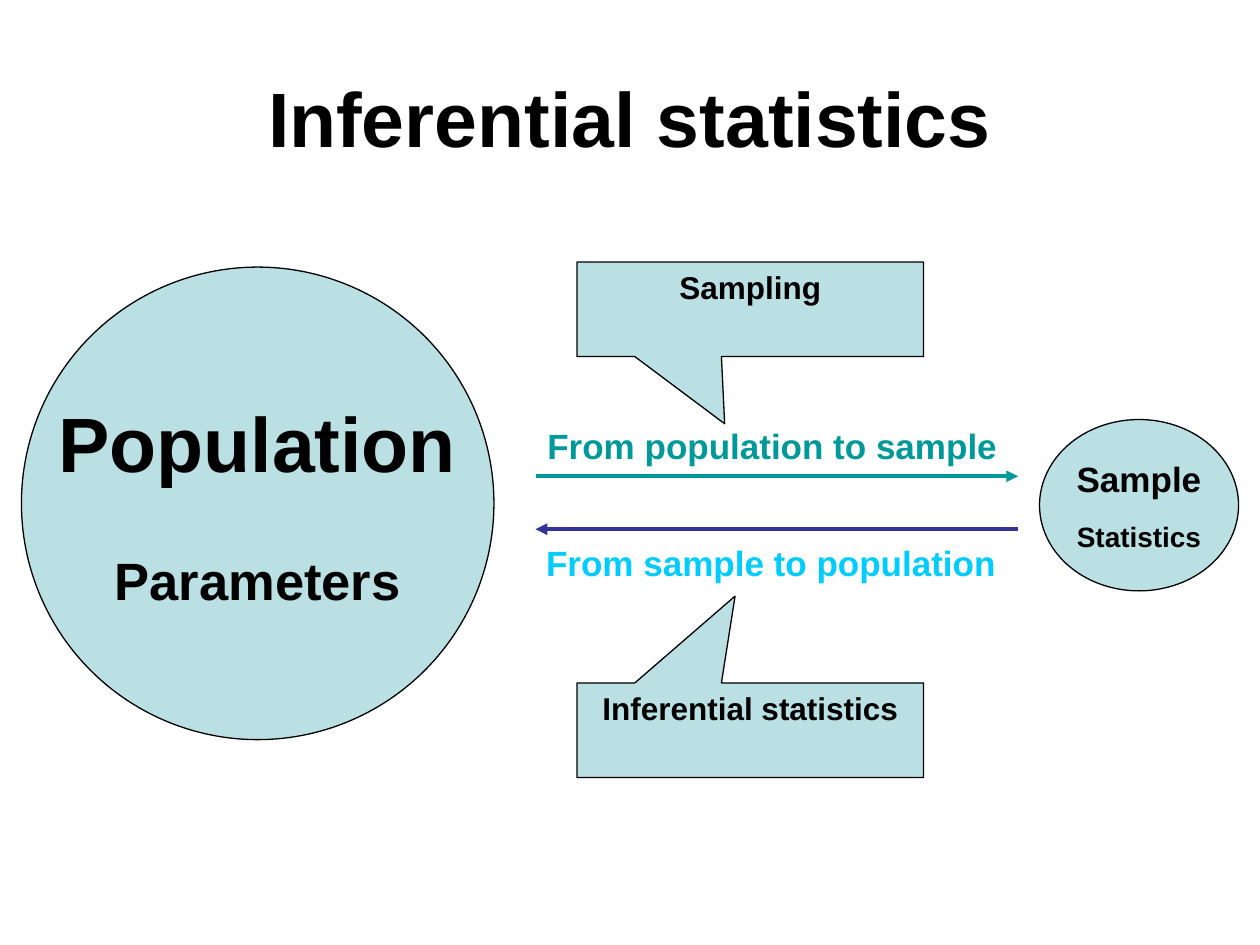
"""Build a slide on how a population and a sample relate."""
from lxml.etree import SubElement
from pptx import Presentation
from pptx.dml.color import RGBColor
from pptx.enum.shapes import MSO_CONNECTOR, MSO_SHAPE
from pptx.enum.text import MSO_ANCHOR, PP_ALIGN
from pptx.oxml.ns import qn
from pptx.util import Inches, Pt

HUES = {
    "ink": "000000",
    "pale": "BBE0E3",
    "teal": "009999",
    "navy": "333399",
    "sky": "00CCFF",
}
FONT = {"name": "Arial", "bold": True}
MID = {"vertical_anchor": MSO_ANCHOR.MIDDLE, "word_wrap": True}
FREE = {"vertical_anchor": MSO_ANCHOR.MIDDLE, "word_wrap": False}
TOP = {"vertical_anchor": MSO_ANCHOR.TOP, "word_wrap": True}


def shade(name):
    return RGBColor.from_string(HUES[name])


def style(item, look):
    for key, value in look.items():
        setattr(item, key, value)


def write(shape, lines, frame, hue="ink"):
    body = shape.text_frame
    style(body, frame)
    for i, (text, size, gap) in enumerate(lines):
        para = body.add_paragraph() if i else body.paragraphs[0]
        style(para, {"alignment": PP_ALIGN.CENTER, "space_before": Pt(gap)})
        run = para.add_run()
        run.text = text
        style(run.font, {**FONT, "size": Pt(size)})
        run.font.color.rgb = shade(hue)


def label(slide, box, text, size, frame, hue="ink"):
    shape = slide.shapes.add_textbox(*map(Inches, box))
    write(shape, [(text, size, 0)], frame, hue)


def figure(slide, kind, box, lines, frame, bends=()):
    shape = slide.shapes.add_shape(kind, *map(Inches, box))
    shape.shadow.inherit = False
    shape.fill.solid()
    shape.fill.fore_color.rgb = shade("pale")
    shape.line.color.rgb = shade("ink")
    shape.line.width = Pt(0.75)
    for i, bend in enumerate(bends):
        shape.adjustments[i] = bend
    write(shape, lines, frame)


def arrow(slide, start, end, y, hue):
    ends = map(Inches, (start, y, end, y))
    line = slide.shapes.add_connector(MSO_CONNECTOR.STRAIGHT, *ends)
    line.line.color.rgb = shade(hue)
    line.line.width = Pt(2.25)
    SubElement(line.line._get_or_add_ln(), qn("a:tailEnd"), type="triangle")
    SubElement(line._element.spPr, qn("a:effectLst"))


def main():
    deck = Presentation()
    style(deck, {"slide_width": Inches(10), "slide_height": Inches(7.5)})
    slide = deck.slides.add_slide(deck.slide_layouts[6])

    label(slide, (0.5, 0.3, 9, 1.25), "Inferential statistics", 44, MID)
    label(slide, (4.17, 3.32, 3.92, 0.43), "From population to sample", 20, TOP, "teal")
    label(slide, (4.08, 4.25, 4.08, 0.43), "From sample to population", 20, TOP, "sky")

    for box, lines in (
        ((0.17, 2.12, 3.75, 3.75), [("Population", 44, 0), ("Parameters", 30, 34.5)]),
        ((8.25, 3.33, 1.58, 1.36), [("Sample", 20, 0), ("Statistics", 16, 11.5)]),
    ):
        figure(slide, MSO_SHAPE.OVAL, box, lines, FREE)

    left, right = 4.25, 8.08
    arrow(slide, left, right, 3.78, "teal")
    arrow(slide, right, left, 4.2, "navy")

    for text, top, tip in (
        ("Sampling", 2.08, (-0.074, 1.211)),
        ("Inferential statistics", 5.42, (-0.044, -1.419)),
    ):
        box = (4.58, top, 2.75, 0.75)
        figure(slide, MSO_SHAPE.RECTANGULAR_CALLOUT, box, [(text, 18, 0)], TOP, tip)

    deck.save("out.pptx")


if __name__ == "__main__":
    main()
